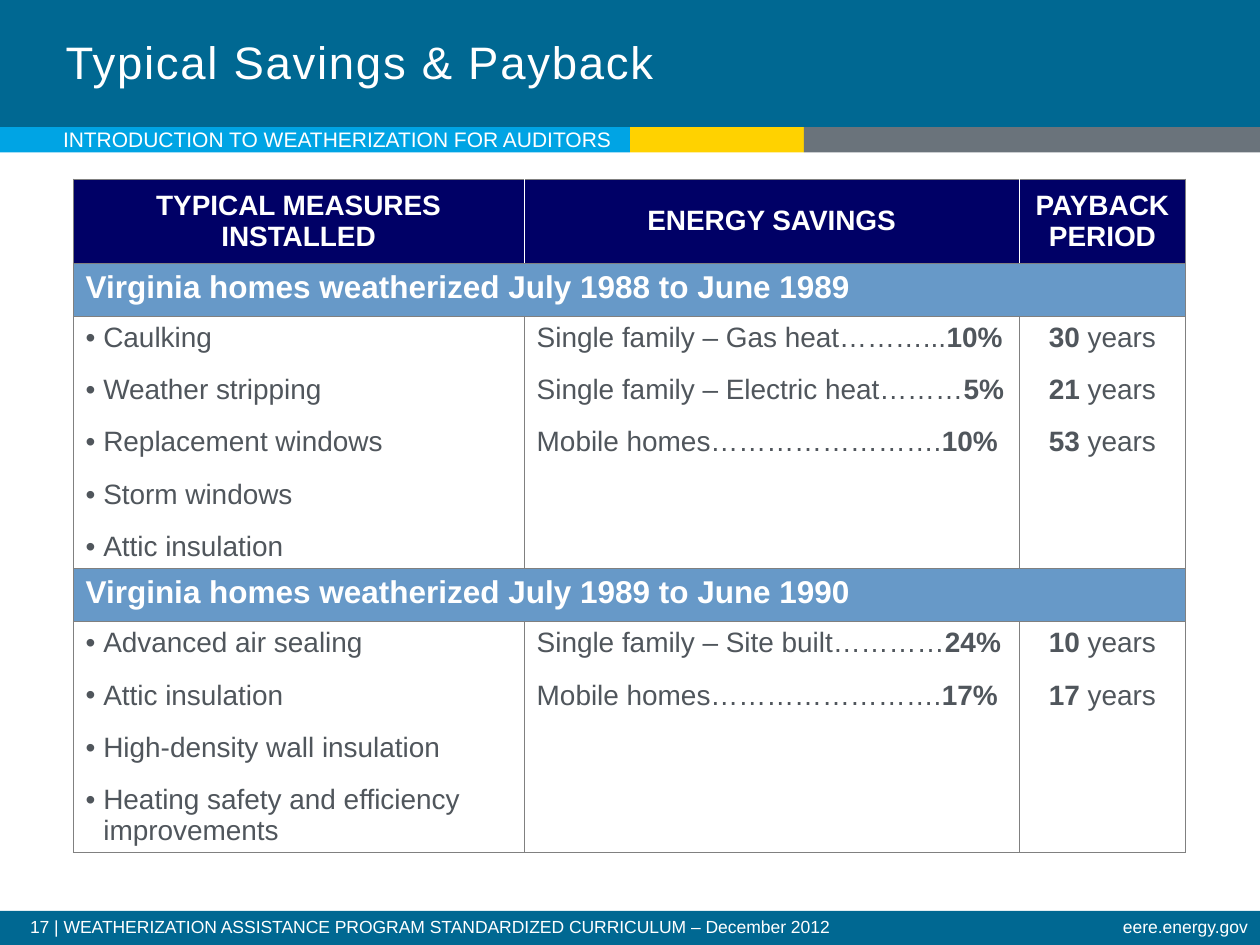
from dataclasses import dataclass
from itertools import product
from typing import NamedTuple

from lxml.etree import SubElement as Sub
from pptx import Presentation
from pptx.dml.color import RGBColor as RGB
from pptx.enum.shapes import MSO_SHAPE as Shape
from pptx.enum.text import MSO_ANCHOR as Anchor, PP_ALIGN as Align
from pptx.oxml.ns import qn
from pptx.util import Inches, Pt


@dataclass(frozen=True)
class Theme:
    font: str = "Arial"
    teal: str = "006892"
    cyan: str = "00A4E4"
    gold: str = "FFD200"
    slate: str = "6A737B"
    navy: str = "000066"
    blue: str = "6799C8"
    white: str = "FFFFFF"
    ink: str = "50565C"
    rule: str = "808080"
    title: int = 26
    head: int = 18
    body: int = 16
    band: int = 12
    foot: int = 10


class Bar(NamedTuple):
    left: float
    top: float
    width: float
    height: float
    color: str


class Label(NamedTuple):
    text: str
    left: float
    top: float
    width: float
    height: float
    size: int
    align: Align = Align.LEFT
    pad: bool = True
    lead: float = 1.0


class Saving(NamedTuple):
    home: str
    rate: str
    years: str


class Period(NamedTuple):
    name: str
    steps: list[str]
    gains: list[Saving]


T = Theme()
BARS = [
    Bar(0, 0, 10, 1.01, T.teal),
    Bar(0, 7.23, 10, 0.27, T.teal),
    Bar(0, 1.01, 5, 0.2, T.cyan),
    Bar(5, 1.01, 1.38, 0.2, T.gold),
    Bar(6.38, 1.01, 3.62, 0.2, T.slate),
]
LABELS = [
    Label("17 | WEATHERIZATION ASSISTANCE PROGRAM STANDARDIZED CURRICULUM – December 2012",
          0.14, 7.24, 7.97, 0.26, T.foot, lead=0.9),
    Label("eere.energy.gov", 5.99, 7.24, 4.01, 0.26, T.foot, Align.RIGHT, lead=0.9),
    Label("INTRODUCTION TO WEATHERIZATION FOR AUDITORS",
          0.5, 0.98, 6.92, 0.25, T.band, pad=False),
]
HEADS = ["TYPICAL MEASURES INSTALLED", "ENERGY SAVINGS", "PAYBACK PERIOD"]
PERIODS = [
    Period("Virginia homes weatherized July 1988 to June 1989",
           ["Caulking", "Weather stripping", "Replacement windows",
            "Storm windows", "Attic insulation"],
           [Saving("Single family – Gas heat………...", "10%", "30"),
            Saving("Single family – Electric heat………", "5%", "21"),
            Saving("Mobile homes…………………….", "10%", "53")]),
    Period("Virginia homes weatherized July 1989 to June 1990",
           ["Advanced air sealing", "Attic insulation", "High-density wall insulation",
            "Heating safety and efficiency improvements"],
           [Saving("Single family – Site built…………", "24%", "10"),
            Saving("Mobile homes…………………….", "17%", "17")]),
]
COLS = [3.58, 3.93, 1.32]
ROWS = [0.67, 0.42, 2.0, 0.42, 1.83]


def add_run(para, text: str, size: int, color: str, bold: bool = False):
    run = para.add_run()
    run.text = text
    font = run.font
    font.name, font.size, font.bold = T.font, Pt(size), bold
    font.color.rgb = RGB.from_string(color)
    return run


def add_bar(slide, bar: Bar) -> None:
    rect = slide.shapes.add_shape(Shape.RECTANGLE, *map(Inches, bar[:4]))
    rect.shadow.inherit = False
    rect.fill.solid()
    rect.fill.fore_color.rgb = RGB.from_string(bar.color)
    rect.line.fill.background()


def add_label(slide, label: Label) -> None:
    frame = slide.shapes.add_textbox(*map(Inches, label[1:5])).text_frame
    frame.word_wrap = True
    if not label.pad:
        frame.margin_left = frame.margin_right = 0
        frame.margin_top = frame.margin_bottom = 0
        frame.vertical_anchor = Anchor.MIDDLE
    para = frame.paragraphs[0]
    para.alignment, para.line_spacing = label.align, label.lead
    add_run(para, label.text, label.size, T.white)


def set_title(slide, text: str) -> None:
    title = slide.shapes.title
    title.left, title.top, title.width, title.height = map(Inches, (0.42, 0.17, 5.89, 0.67))
    slide.shapes._spTree.append(title._element)
    title.text_frame.vertical_anchor = Anchor.MIDDLE
    para = title.text_frame.paragraphs[0]
    para.alignment, para.line_spacing = Align.LEFT, Pt(28)
    run = add_run(para, text, T.title, T.white)
    run._r.get_or_add_rPr().set("spc", "100")


def add_edge(cell, side: str, color: str, width: float) -> None:
    line = Sub(cell._tc.get_or_add_tcPr(), qn(f"a:ln{side}"), w=str(Pt(width)))
    Sub(Sub(line, qn("a:solidFill")), qn("a:srgbClr"), val=color)


def set_cell(cell, row: int, col: int) -> None:
    inner = {"L": col > 0, "R": col < len(COLS) - 1}
    for side in "LRTB":
        light = row == 0 and inner.get(side, False)
        add_edge(cell, side, T.white if light else T.rule, 0.5 if light else 0.25)
    if row and row % 2 == 0:
        cell.fill.background()
    else:
        cell.fill.solid()
        cell.fill.fore_color.rgb = RGB.from_string(T.blue if row else T.navy)


def fill_list(cell, lines: list, align: Align = Align.LEFT, dots: bool = False) -> None:
    for i, parts in enumerate(lines):
        para = cell.text_frame.add_paragraph() if i else cell.text_frame.paragraphs[0]
        if dots:
            props = para._p.get_or_add_pPr()
            props.set("marL", str(Inches(0.14)))
            props.set("indent", str(-Inches(0.14)))
            Sub(props, qn("a:buFont"), typeface=T.font)
            Sub(props, qn("a:buChar"), char="•")
        para.alignment = align
        para.space_before, para.space_after = Pt(6 if i else 0), Pt(6)
        for text, bold in parts:
            add_run(para, text, T.body, T.ink, bold)


def add_grid(slide) -> None:
    grid = slide.shapes.add_table(len(ROWS), len(COLS), Inches(0.58), Inches(1.42),
                                  Inches(sum(COLS)), Inches(sum(ROWS))).table
    grid.first_row = grid.horz_banding = False
    for col, width in zip(grid.columns, COLS):
        col.width = Inches(width)
    for row, height in zip(grid.rows, ROWS):
        row.height = Inches(height)
    for row, col in product(range(len(ROWS)), range(len(COLS))):
        set_cell(grid.cell(row, col), row, col)
    for col, text in enumerate(HEADS):
        cell = grid.cell(0, col)
        cell.vertical_anchor = Anchor.MIDDLE
        para = cell.text_frame.paragraphs[0]
        para.alignment = Align.CENTER
        add_run(para, text, T.body, T.white, True)
    for i, period in enumerate(PERIODS):
        top = 1 + 2 * i
        band = grid.cell(top, 0)
        band.merge(grid.cell(top, len(COLS) - 1))
        add_run(band.text_frame.paragraphs[0], period.name, T.head, T.white, True)
        steps, gains, years = (grid.cell(top + 1, col) for col in range(len(COLS)))
        fill_list(steps, [[(step, False)] for step in period.steps], dots=True)
        fill_list(gains, [[(g.home, False), (g.rate, True)] for g in period.gains])
        fill_list(years, [[(g.years, True), (" years", False)] for g in period.gains],
                  Align.CENTER)


def main() -> None:
    deck = Presentation()
    deck.slide_width, deck.slide_height = Inches(10), Inches(7.5)
    slide = deck.slides.add_slide(deck.slide_layouts[5])
    for bar in BARS:
        add_bar(slide, bar)
    set_title(slide, "Typical Savings & Payback")
    add_grid(slide)
    for label in LABELS:
        add_label(slide, label)
    deck.save("out.pptx")


if __name__ == "__main__":
    main()
